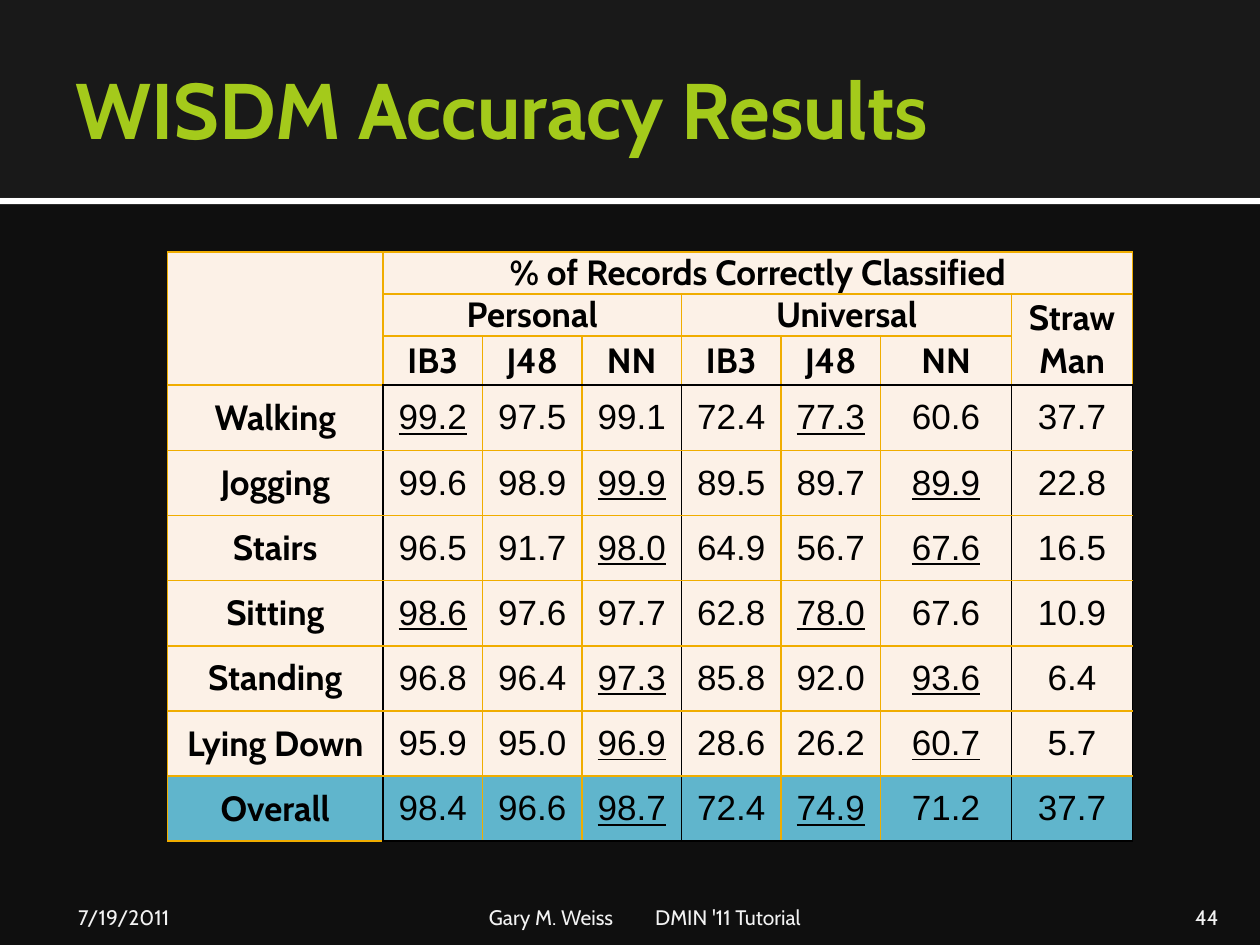
from lxml import etree
from pptx import Presentation
from pptx.dml.color import RGBColor
from pptx.enum.shapes import MSO_SHAPE
from pptx.enum.text import MSO_ANCHOR, PP_ALIGN
from pptx.oxml.ns import qn
from pptx.util import Inches, Pt

RECTANGLE = MSO_SHAPE.RECTANGLE
LEFT, CENTER, RIGHT = PP_ALIGN.LEFT, PP_ALIGN.CENTER, PP_ALIGN.RIGHT
TOP, MIDDLE, BOTTOM = MSO_ANCHOR.TOP, MSO_ANCHOR.MIDDLE, MSO_ANCHOR.BOTTOM

# The slide is a grid of 10 columns by 7.5 rows of one inch
GRID_COLUMNS, GRID_ROWS = 10, 7.5

METHODS = ["IB3", "J48", "NN"]
RESULTS = {
    "Walking": [99.2, 97.5, 99.1, 72.4, 77.3, 60.6, 37.7],
    "Jogging": [99.6, 98.9, 99.9, 89.5, 89.7, 89.9, 22.8],
    "Stairs": [96.5, 91.7, 98.0, 64.9, 56.7, 67.6, 16.5],
    "Sitting": [98.6, 97.6, 97.7, 62.8, 78.0, 67.6, 10.9],
    "Standing": [96.8, 96.4, 97.3, 85.8, 92.0, 93.6, 6.4],
    "Lying Down": [95.9, 95.0, 96.9, 28.6, 26.2, 60.7, 5.7],
    "Overall": [98.4, 96.6, 98.7, 72.4, 74.9, 71.2, 37.7],
}
HEADER_ROWS = 3
LAST_ROW = HEADER_ROWS + len(RESULTS)
GROUP_EDGES = (1, 4, 7, 8)  # column edges around Personal, Universal, Straw Man
COLUMN_WIDTHS = [1.71] + [0.79] * 5 + [1.04, 0.96]
HEADER_HEIGHTS = [0.33, 0.33, 0.39]
TABLE_HEIGHT = 4.67


def color(value):
    return RGBColor.from_string(value)


class ResultsSlide:
    font = "Cabin"
    number_font = "Arial"
    background = "0F0F0F"
    band = "191919"
    white = "FFFFFF"
    accent = "A4CA1B"
    footer = "F2F2F2"
    black = "000000"
    gold = "F0AD00"
    cream = "FCF1E7"
    blue = "60B5CC"

    def __init__(self, presentation):
        self.slide = presentation.slides.add_slide(presentation.slide_layouts[6])
        fill = self.slide.background.fill
        fill.solid()
        fill.fore_color.rgb = color(self.background)

    def box(self, left, top, width, height, fill):
        shape = self.slide.shapes.add_shape(
            RECTANGLE, Inches(left), Inches(top), Inches(width), Inches(height))
        shape.shadow.inherit = False
        shape.fill.solid()
        shape.fill.fore_color.rgb = color(fill)
        shape.line.fill.background()

    def style(self, paragraph, size, fill, bold=False, align=LEFT, font=None,
              underline=False):
        paragraph.alignment = align
        for run in paragraph.runs:
            run.font.name = font or self.font
            run.font.size = Pt(size)
            run.font.bold = bold
            run.font.underline = underline
            run.font.color.rgb = color(fill)

    def text(self, words, place, insets, size, fill, anchor=BOTTOM, bold=False,
             align=LEFT, tab=None):
        shape = self.slide.shapes.add_textbox(*[Inches(n) for n in place])
        frame = shape.text_frame
        frame.word_wrap = True
        frame.vertical_anchor = anchor
        (frame.margin_left, frame.margin_top,
         frame.margin_right, frame.margin_bottom) = [Inches(n) for n in insets]
        frame.text = words
        paragraph = frame.paragraphs[0]
        self.style(paragraph, size, fill, bold, align)
        if tab:
            properties = paragraph._p.get_or_add_pPr()
            stops = etree.SubElement(properties, qn("a:tabLst"))
            etree.SubElement(stops, qn("a:tab"), pos=str(Inches(tab)), algn="l")

    def table(self, left, top):
        body_height = (TABLE_HEIGHT - sum(HEADER_HEIGHTS)) / len(RESULTS)
        heights = HEADER_HEIGHTS + [body_height] * len(RESULTS)
        table = self.slide.shapes.add_table(
            len(heights), len(COLUMN_WIDTHS), Inches(left), Inches(top),
            Inches(sum(COLUMN_WIDTHS)), Inches(TABLE_HEIGHT)).table
        table.first_row = table.horz_banding = False
        for column, width in zip(table.columns, COLUMN_WIDTHS):
            column.width = Inches(width)
        for row, height in zip(table.rows, heights):
            row.height = Inches(height)
        for cell in table.iter_cells():
            cell.margin_left = cell.margin_right = Inches(0.04)
            cell.margin_top = cell.margin_bottom = 0
        return table

    def cell(self, table, row, column, words, **style):
        cell = table.cell(row, column)
        cell.vertical_anchor = MIDDLE if row else TOP
        cell.text = words
        self.style(cell.text_frame.paragraphs[0], 20, self.black, align=CENTER, **style)

    def finish_cell(self, cell, row, column):
        cell.fill.solid()
        cell.fill.fore_color.rgb = color(self.blue if row == LAST_ROW - 1 else self.cream)
        # Black lines frame each group of numbers, gold lines the rest
        bottom, right = row + cell.span_height, column + cell.span_width
        edges = {
            "a:lnL": row >= HEADER_ROWS and column in GROUP_EDGES,
            "a:lnR": row >= HEADER_ROWS and right in GROUP_EDGES,
            "a:lnT": column > 0 and row == HEADER_ROWS,
            "a:lnB": column > 0 and bottom in (HEADER_ROWS, LAST_ROW),
        }
        properties = cell._tc.get_or_add_tcPr()
        for position, (tag, is_black) in enumerate(edges.items()):
            line = etree.Element(qn(tag), w=str(Pt(1)))
            fill = etree.SubElement(line, qn("a:solidFill"))
            etree.SubElement(fill, qn("a:srgbClr"),
                             val=self.black if is_black else self.gold)
            properties.insert(position, line)


def add_results(page):
    table = page.table(1.33, 2)

    # Header: row, column, rows spanned, columns spanned, words
    headers = [
        (0, 0, 3, 1, ""),
        (0, 1, 1, 7, "% of Records Correctly Classified"),
        (1, 1, 1, 3, "Personal"),
        (1, 4, 1, 3, "Universal"),
        (1, 7, 2, 1, "Straw Man"),
    ]
    headers += [(2, column, 1, 1, method)
                for column, method in enumerate(METHODS * 2, 1)]
    for row, column, height, width, words in headers:
        if height * width > 1:
            table.cell(row, column).merge(
                table.cell(row + height - 1, column + width - 1))
        page.cell(table, row, column, words, bold=True)

    # Body: the best method of each group is underlined
    for row, (activity, values) in enumerate(RESULTS.items(), HEADER_ROWS):
        page.cell(table, row, 0, activity, bold=True)
        for index, value in enumerate(values):
            start = index // 3 * 3
            group = values[start:start + 3]
            best = len(group) > 1 and value == max(group)
            page.cell(table, row, index + 1, f"{value:.1f}",
                      font=page.number_font, underline=best)

    # Fills and borders
    for row in range(LAST_ROW):
        for column in range(len(COLUMN_WIDTHS)):
            cell = table.cell(row, column)
            if not cell.is_spanned:
                page.finish_cell(cell, row, column)


def main():
    presentation = Presentation()
    presentation.slide_width = Inches(GRID_COLUMNS)
    presentation.slide_height = Inches(GRID_ROWS)
    page = ResultsSlide(presentation)

    # Title band
    page.box(0, 1.57, GRID_COLUMNS, 0.05, page.white)
    page.box(0, 0, GRID_COLUMNS, 1.57, page.band)
    page.text("WISDM Accuracy Results", (0.5, 0.17, 9, 1.37),
              (0.1, 0.05, 0.05, 0.05), 45, page.accent, anchor=MIDDLE, bold=True)

    # Footer
    footer_top, footer_height = 7.08, 0.3
    page.text("7/19/2011", (0.5, footer_top, 2.33, footer_height),
              (0.12, 0.05, 0.05, 0), 12, page.footer)
    page.text("Gary M. Weiss\tDMIN '11 Tutorial", (3.83, footer_top, 5.08, footer_height),
              (0.05, 0.05, 0.05, 0), 12, page.footer, tab=1.32)
    page.text("44", (8.97, footer_top, 0.8, footer_height),
              (0.1, 0.05, 0.1, 0), 12, page.footer, align=RIGHT)

    # Accuracy table
    add_results(page)
    presentation.save("out.pptx")


if __name__ == "__main__":
    main()
